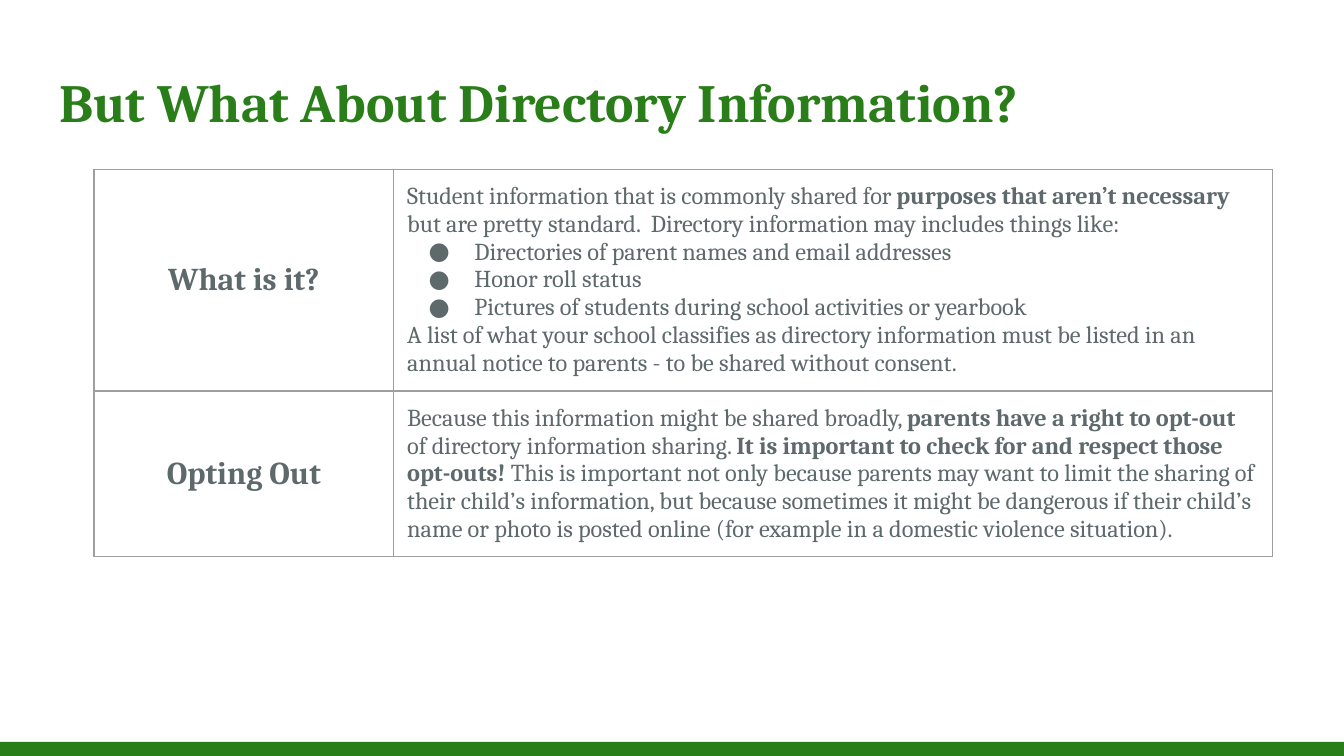
from pptx import Presentation
from pptx.dml.color import RGBColor
from pptx.enum.shapes import MSO_SHAPE
from pptx.enum.text import MSO_ANCHOR, MSO_AUTO_SIZE, PP_ALIGN
from pptx.oxml import parse_xml
from pptx.oxml.ns import nsdecls
from pptx.util import Inches, Pt

COLORS = {"green": "2A7E19", "text": "5E696C", "border": "9E9E9E"}
FONT = "Cambria"
PAD = Inches(0.1)
BULLET = "●"

ROWS = [
    ("What is it?", 1.65, [
        [("Student information that is commonly shared for ", False),
         ("purposes that aren’t necessary", True),
         (" but are pretty standard.  Directory information may includes things like:", False)],
        "Directories of parent names and email addresses",
        "Honor roll status",
        "Pictures of students during school activities or yearbook",
        [("A list of what your school classifies as directory information must be "
          "listed in an annual notice to parents - to be shared without consent.", False)],
    ]),
    ("Opting Out", 1.23, [
        [("Because this information might be shared broadly, ", False),
         ("parents have a right to opt-out ", True),
         ("of directory information sharing. ", False),
         ("It is important to check for and respect those opt-outs! ", True),
         ("This is important not only because parents may want to limit the sharing of "
          "their child’s information, but because sometimes it might be dangerous if "
          "their child’s name or photo is posted online (for example in a domestic "
          "violence situation).", False)],
    ]),
]


def rgb(name):
    return RGBColor.from_string(COLORS[name])


def add_run(p, text, size, color, bold):
    r = p.add_run()
    r.text = text
    r.font.name = FONT
    r.font.size = Pt(size)
    r.font.bold = bold
    r.font.color.rgb = rgb(color)


def set_bullet(p):
    pPr = p._p.get_or_add_pPr()
    pPr.set("marL", str(Inches(0.5)))
    pPr.set("indent", str(Inches(-0.34)))
    for xml in (
        f'<a:buClr {nsdecls("a")}><a:srgbClr val="{COLORS["text"]}"/></a:buClr>',
        f'<a:buFont {nsdecls("a")} typeface="{FONT}"/>',
        f'<a:buChar {nsdecls("a")} char="{BULLET}"/>',
    ):
        pPr.append(parse_xml(xml))


def format_cell(cell, anchor):
    cell.margin_left = cell.margin_right = PAD
    cell.margin_top = cell.margin_bottom = PAD
    cell.vertical_anchor = anchor
    tcPr = cell._tc.get_or_add_tcPr()
    for side in ("lnL", "lnR", "lnT", "lnB"):
        tcPr.append(parse_xml(
            f'<a:{side} {nsdecls("a")} w="{Pt(0.75)}"><a:solidFill>'
            f'<a:srgbClr val="{COLORS["border"]}"/></a:solidFill></a:{side}>'))
    cell.fill.background()


def fill_details(tf, paragraphs):
    for i, content in enumerate(paragraphs):
        p = tf.paragraphs[0] if i == 0 else tf.add_paragraph()
        if isinstance(content, str):
            set_bullet(p)
            content = [(content, False)]
        for text, bold in content:
            add_run(p, text, 13, "text", bold)


def add_title(s, left, top, width, height):
    sp = s.shapes.title
    sp.left, sp.top, sp.width, sp.height = map(Inches, (left, top, width, height))
    tf = sp.text_frame
    tf.margin_left = tf.margin_right = tf.margin_top = tf.margin_bottom = PAD
    tf.vertical_anchor = MSO_ANCHOR.TOP
    tf.auto_size = MSO_AUTO_SIZE.NONE
    p = tf.paragraphs[0]
    p.alignment = PP_ALIGN.LEFT
    add_run(p, "But What About Directory Information?", 28.8, "green", True)


def add_info_table(s, left, top, width, label_width):
    height = sum(row[1] for row in ROWS)
    table = s.shapes.add_table(
        len(ROWS), 2, *map(Inches, (left, top, width, height))).table
    table.first_row = table.horz_banding = False
    table.columns[0].width = Inches(label_width)
    table.columns[1].width = Inches(width - label_width)
    for i, (label, row_height, paragraphs) in enumerate(ROWS):
        table.rows[i].height = Inches(row_height)
        name, details = table.cell(i, 0), table.cell(i, 1)
        format_cell(name, MSO_ANCHOR.MIDDLE)
        format_cell(details, MSO_ANCHOR.TOP)
        p = name.text_frame.paragraphs[0]
        p.alignment = PP_ALIGN.CENTER
        add_run(p, label, 17, "text", True)
        fill_details(details.text_frame, paragraphs)


def add_footer_bar(s, left, top, width, height):
    sp = s.shapes.add_shape(
        MSO_SHAPE.RECTANGLE, *map(Inches, (left, top, width, height)))
    sp.shadow.inherit = False
    sp.fill.solid()
    sp.fill.fore_color.rgb = rgb("green")
    sp.line.fill.background()


def main():
    prs = Presentation()
    prs.slide_width = Inches(10)
    prs.slide_height = prs.slide_width * 9 // 16
    s = prs.slides.add_slide(prs.slide_layouts[5])
    add_footer_bar(s, 0, 5.52, 10, 0.11)
    add_title(s, 0.34, 0.41, 9.32, 0.68)
    add_info_table(s, 0.7, 1.26, 8.77, 2.23)
    prs.save("out.pptx")


if __name__ == "__main__":
    main()
